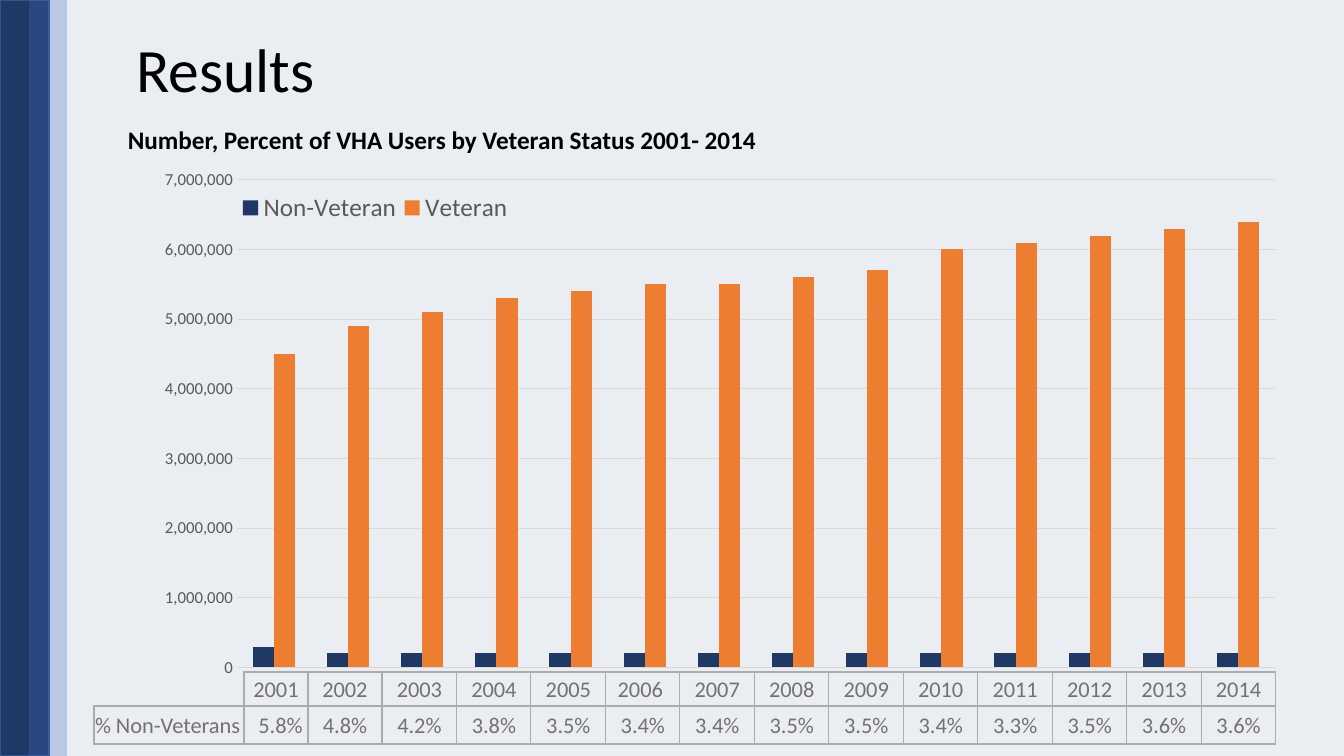
from dataclasses import dataclass

from lxml.etree import SubElement
from pptx import Presentation
from pptx.chart.data import CategoryChartData
from pptx.dml.color import RGBColor
from pptx.enum.chart import XL_CHART_TYPE as ChartType, XL_LEGEND_POSITION as LegendPosition, XL_TICK_MARK as TickMark
from pptx.enum.shapes import MSO_SHAPE as Shape
from pptx.enum.text import MSO_ANCHOR as Anchor, PP_ALIGN as Align
from pptx.oxml import parse_xml
from pptx.oxml.ns import nsdecls, qn
from pptx.util import Pt

PX = 914400 / 100.8
FONT = "Calibri"
NAVY, ORANGE, BLUE = "203864", "ED7D31", "4472C4"
BLACK, GREY, AXIS_GREY, BORDER, GRID = "000000", "767171", "595959", "AFABAB", "D9D9D9"


@dataclass(frozen=True)
class Strip:
    left: int
    width: int
    color: str
    edge: str = ""
    opacity: int = 100


@dataclass(frozen=True)
class Series:
    name: str
    color: str
    unit: int
    counts: tuple[int, ...]


STRIPS = (Strip(0, 49, NAVY, edge="325491"), Strip(29, 38, BLUE, opacity=29))
USERS = (
    Series("Non-Veteran", NAVY, 100_000, (3,) + (2,) * 13),
    Series("Veteran", ORANGE, 100_000, (45, 49, 51, 53, 54, 55, 55, 56, 57, 60, 61, 62, 63, 64)),
)
YEARS = [str(year) for year in range(2001, 2015)]
SHARES = "5.8% 4.8% 4.2% 3.8% 3.5% 3.4% 3.4% 3.5% 3.5% 3.4% 3.3% 3.5% 3.6% 3.6%".split()
LEFT_INSETS, RIGHT_INSETS = {"5.8%": 10}, {"2006": 6}


def px(length: int) -> int:
    return round(length * PX)


def box(*lengths: int) -> list[int]:
    return [px(length) for length in lengths]


def rgb(color: str) -> RGBColor:
    return RGBColor.from_string(color)


def style_font(font, size: int, color: str, bold: bool = False) -> None:
    font.name, font.size, font.bold = FONT, Pt(size), bold
    font.color.rgb = rgb(color)


def write(frame, text: str, *, size: int, color: str, bold: bool = False,
          align: Align = Align.LEFT, spacing: float = 1.0) -> None:
    paragraph = frame.paragraphs[0]
    paragraph.alignment, paragraph.line_spacing = align, spacing
    style_font(paragraph.font, size, color, bold)
    if text:
        run = paragraph.add_run()
        run.text = text
        style_font(run.font, size, color, bold)
    else:
        SubElement(paragraph._p, qn("a:endParaRPr"), sz=str(size * 100))


def add_strip(shapes, strip: Strip) -> None:
    bar = shapes.add_shape(Shape.RECTANGLE, *box(strip.left, 0, strip.width, 756))
    bar.shadow.inherit = False
    bar.fill.solid()
    bar.fill.fore_color.rgb = rgb(strip.color)
    if strip.opacity < 100:
        tint = bar._element.spPr.find(qn("a:solidFill"))[0]
        SubElement(tint, qn("a:alpha"), val=str(strip.opacity * 1000))
    if strip.edge:
        bar.line.color.rgb = rgb(strip.edge)
        bar.line.width = Pt(1)
    else:
        bar.line.fill.background()


def set_borders(cell, sides: str) -> None:
    properties = cell._tc.get_or_add_tcPr()
    for index, side in enumerate("LRTB"):
        paint = f'<a:solidFill><a:srgbClr val="{BORDER}"/></a:solidFill>' if side in sides else "<a:noFill/>"
        properties.insert(index, parse_xml(f'<a:ln{side} {nsdecls("a")} w="12700">{paint}</a:ln{side}>'))


def add_share_table(slide) -> None:
    rows = ([""] + YEARS, ["% Non-Veterans"] + SHARES)
    edges = [94, 244] + [308 + round(968 * step / 13) for step in range(14)]
    table = slide.shapes.add_table(2, len(rows[0]), *box(94, 672, 1182, 72)).table
    table.first_row = table.horz_banding = False
    for column, left, right in zip(table.columns, edges, edges[1:]):
        column.width = px(right - left)
    for row, height, texts in zip(table.rows, (34, 38), rows):
        row.height = px(height)
        for index, (cell, text) in enumerate(zip(row.cells, texts)):
            cell.fill.background()
            set_borders(cell, "LRTB" if text else "RB")
            cell.vertical_anchor = Anchor.MIDDLE
            cell.margin_left, cell.margin_right = box(LEFT_INSETS.get(text, 1), RIGHT_INSETS.get(text, 1))
            cell.margin_top, cell.margin_bottom = box(1, 0)
            write(cell.text_frame, text, size=16, color=GREY, align=Align.CENTER if index else Align.LEFT)


def manual_layout(left: float, top: float, width: float, height: float, target: str = ""):
    inner = f'<c:layoutTarget val="{target}"/>' if target else ""
    sizes = "".join(f'<c:{tag} val="{value}"/>' for tag, value in zip("xywh", (left, top, width, height)))
    return parse_xml(
        f'<c:layout {nsdecls("c")}><c:manualLayout>{inner}<c:xMode val="edge"/>'
        f'<c:yMode val="edge"/>{sizes}</c:manualLayout></c:layout>')


def add_user_chart(slide) -> None:
    users = CategoryChartData(number_format="#,##0")
    users.categories = [str(number) for number in range(1, 15)]
    for series in USERS:
        users.add_series(series.name, [count * series.unit for count in series.counts])
    chart = slide.shapes.add_chart(ChartType.COLUMN_CLUSTERED, *box(129, 155, 1172, 529), users).chart
    style_font(chart.font, 10, BLACK)
    chart.has_title = False
    chart.category_axis.visible = False

    axis = chart.value_axis
    axis.minimum_scale, axis.maximum_scale, axis.major_unit = 0, 7_000_000, 1_000_000
    axis.major_tick_mark = axis.minor_tick_mark = TickMark.NONE
    axis.format.line.fill.background()
    axis.major_gridlines.format.line.color.rgb = rgb(GRID)
    axis.major_gridlines.format.line.width = Pt(0.75)
    axis.tick_labels.number_format = "#,##0"
    axis.tick_labels.number_format_is_linked = False
    style_font(axis.tick_labels.font, 12, AXIS_GREY)

    plot = chart.plots[0]
    plot.gap_width, plot.overlap, plot.vary_by_categories = 150, 0, False
    for columns, series in zip(plot.series, USERS):
        columns.format.fill.solid()
        columns.format.fill.fore_color.rgb = rgb(series.color)

    chart.has_legend = True
    legend = chart.legend
    legend.position, legend.include_in_layout = LegendPosition.RIGHT, False
    style_font(legend.font, 18, AXIS_GREY)
    for old in legend._element.findall(qn("c:layout")):
        legend._element.remove(old)
    legend._element.find(qn("c:legendPos")).addnext(manual_layout(0.09, 0.06, 0.24, 0.08))

    chart_part = chart._chartSpace.chart
    area = chart_part.plotArea
    for old in area.findall(qn("c:layout")):
        area.remove(old)
    area.insert(0, manual_layout(0.092, 0.047, 0.886, 0.922, "inner"))
    chart_part.addnext(parse_xml(
        f'<c:spPr {nsdecls("c", "a")}><a:noFill/><a:ln><a:noFill/></a:ln></c:spPr>'))


def main() -> None:
    deck = Presentation()
    deck.slide_width, deck.slide_height = box(1344, 756)
    slide = deck.slides.add_slide(deck.slide_layouts[5])
    slide.background.fill.solid()
    slide.background.fill.fore_color.rgb = rgb("EAEDF2")

    title = slide.shapes.title
    title.left, title.top, title.width, title.height = box(126, 0, 1159, 146)
    title.text_frame.vertical_anchor = Anchor.MIDDLE
    write(title.text_frame, "Results", size=44, color=BLACK, spacing=0.9)

    side_band = slide.shapes.add_group_shape()
    for strip in STRIPS:
        add_strip(side_band.shapes, strip)

    subtitle = slide.shapes.add_textbox(*box(118, 119, 890, 40)).text_frame
    subtitle.word_wrap = True
    write(subtitle, "Number, Percent of VHA Users by Veteran Status 2001- 2014", size=18, color=BLACK, bold=True)

    add_share_table(slide)
    add_user_chart(slide)
    deck.save("out.pptx")


if __name__ == "__main__":
    main()
